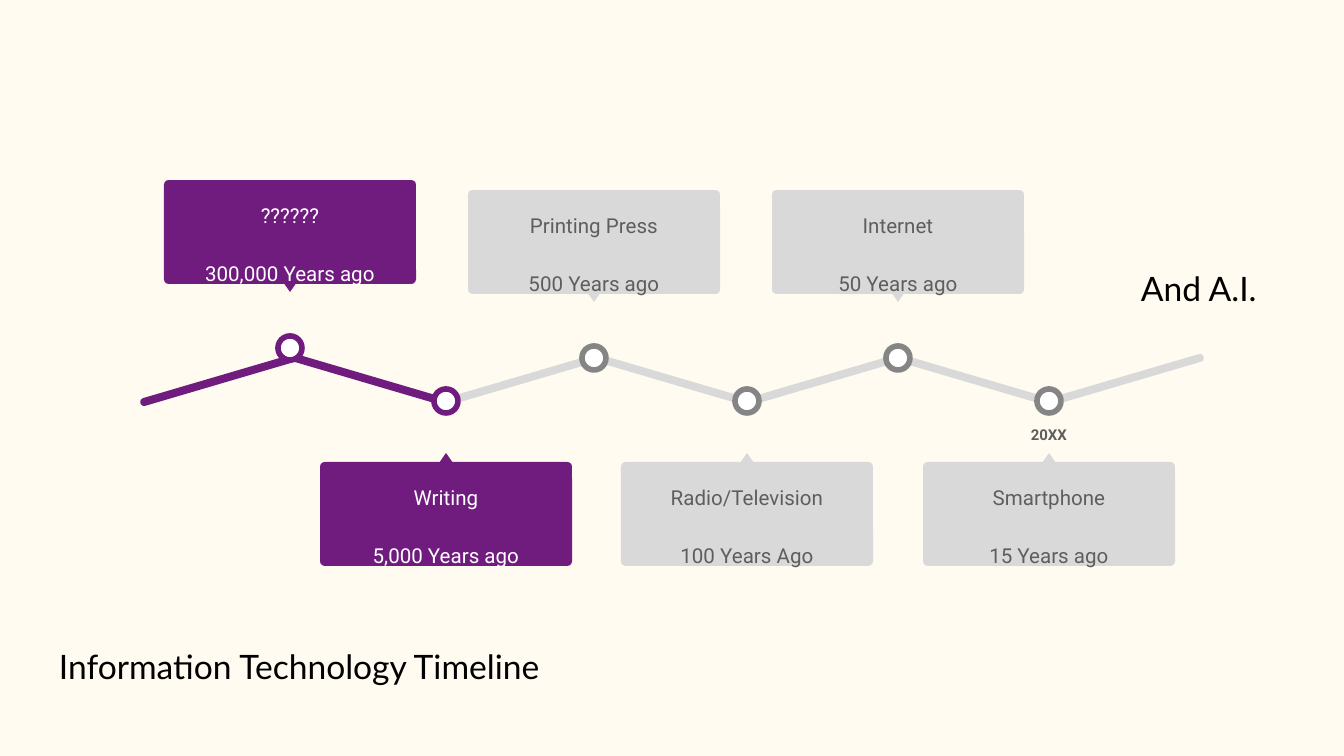
"""Builds a one-slide zigzag timeline of information technology."""
from dataclasses import dataclass

from pptx import Presentation
from pptx.dml.color import RGBColor
from pptx.enum.shapes import MSO_SHAPE
from pptx.enum.text import MSO_ANCHOR, PP_ALIGN
from pptx.util import Emu, Pt

SLIDE_W, SLIDE_H = 1344, 756
EMU_PER_PX = 9144000 / SLIDE_W
INSET = 13
CARD_W, CARD_H = 252, 104
POINTER_W, POINTER_H = 14, 10
DOT = 24
SEGMENT_W, SEGMENT_H = 164, 8
SEGMENT_X, SEGMENT_Y, SEGMENT_STEP = 219, 380, 151
SEGMENT_TILT = 16.4
SEGMENTS = 7
REACHED = 2


@dataclass(frozen=True)
class Theme:
    """Colours, fonts and type sizes of the slide."""
    background: str = "FFFBF0"
    ink: str = "000000"
    accent: str = "701C7F"
    muted: str = "D9D9D9"
    ring: str = "858585"
    grey_text: str = "5E5E5E"
    white: str = "FFFFFF"
    heading_font: str = "Lato"
    card_font: str = "Roboto"
    heading_size: int = 18
    card_size: int = 11
    year_size: int = 8
    ring_width: int = 3


@dataclass(frozen=True)
class Milestone:
    """One step of the timeline, with its card above or below the line."""
    x: int
    card_top: int
    above: bool
    lines: tuple
    reached: bool = False
    year: str = ""


THEME = Theme()
MILESTONES = (
    Milestone(290, 180, True, ("??????", "300,000 Years ago"), reached=True),
    Milestone(446, 462, False, ("Writing", "5,000 Years ago"), reached=True),
    Milestone(594, 190, True, ("Printing Press", "500 Years ago")),
    Milestone(747, 462, False, ("Radio/Television", "100 Years Ago")),
    Milestone(898, 190, True, ("Internet", "50 Years ago")),
    Milestone(1049, 462, False, ("Smartphone", "15 Years ago"), year="20XX"),
)


def px(value):
    """Turn whole pixels into EMU."""
    return Emu(round(value * EMU_PER_PX))


def box(x, y, w, h):
    """Return left, top, width and height in EMU."""
    return px(x), px(y), px(w), px(h)


def color(value):
    """Return an RGB colour from its hex code."""
    return RGBColor.from_string(value)


def add_filled(shapes, kind, bounds, fill, rotation=0, adjust=None):
    """Add a flat preset shape without outline or shadow."""
    sp = shapes.add_shape(kind, *box(*bounds))
    sp.shadow.inherit = False
    sp.fill.solid()
    sp.fill.fore_color.rgb = color(fill)
    sp.line.fill.background()
    sp.rotation = rotation
    if adjust is not None:
        sp.adjustments[0] = adjust
    return sp


def write(tf, lines, font, size, ink, align=PP_ALIGN.LEFT, bold=False,
          spacing=1.0, anchor=MSO_ANCHOR.TOP):
    """Fill a text frame with equally formatted paragraphs."""
    tf.word_wrap = True
    tf.vertical_anchor = anchor
    tf.margin_left = tf.margin_right = tf.margin_top = tf.margin_bottom = px(INSET)
    tf.text = "\n".join(lines)
    for i, p in enumerate(tf.paragraphs):
        p.alignment = align
        p.line_spacing = spacing
        p.space_before = Pt(16 if i else 0)
        for r in p.runs:
            r.font.name, r.font.size, r.font.bold = font, Pt(size), bold
            r.font.color.rgb = color(ink)


def write_heading(tf, text, anchor=MSO_ANCHOR.TOP):
    """Write one line in the heading style."""
    write(tf, [text], THEME.heading_font, THEME.heading_size, THEME.ink, anchor=anchor)


def add_title(slide, text):
    """Move the title placeholder to the foot of the slide and fill it."""
    title = slide.shapes.title
    title.left, title.top, title.width, title.height = box(46, 622, 882, 89)
    write_heading(title.text_frame, text, MSO_ANCHOR.MIDDLE)


def add_zigzag(shapes):
    """Add the line segments, the earliest one on top."""
    for i in reversed(range(SEGMENTS)):
        left = SEGMENT_X + i * SEGMENT_STEP - SEGMENT_W / 2
        add_filled(shapes, MSO_SHAPE.ROUNDED_RECTANGLE,
                   (left, SEGMENT_Y - SEGMENT_H / 2, SEGMENT_W, SEGMENT_H),
                   THEME.accent if i < REACHED else THEME.muted,
                   SEGMENT_TILT if i % 2 else -SEGMENT_TILT, 0.5)


def add_milestone(slide, step):
    """Add a grouped card with its pointer, text and dot on the line."""
    shapes = slide.shapes.add_group_shape().shapes
    fill = THEME.accent if step.reached else THEME.muted
    ink = THEME.white if step.reached else THEME.grey_text
    x, top = step.x, step.card_top
    pointer_top = top + 102 if step.above else top - 9
    dot_y = top + 168 if step.above else top - 61

    add_filled(shapes, MSO_SHAPE.ROUNDED_RECTANGLE,
               (x - CARD_W / 2, top, CARD_W, CARD_H), fill, adjust=0.045)
    add_filled(shapes, MSO_SHAPE.ISOSCELES_TRIANGLE,
               (x - POINTER_W / 2, pointer_top, POINTER_W, POINTER_H),
               fill, 180 if step.above else 0)
    label = shapes.add_textbox(*box(x - 120, top + 6, 240, 92))
    write(label.text_frame, step.lines, THEME.card_font, THEME.card_size, ink,
          PP_ALIGN.CENTER, spacing=1.15)
    dot = add_filled(shapes, MSO_SHAPE.OVAL,
                     (x - DOT / 2, dot_y - DOT / 2, DOT, DOT), THEME.white)
    dot.line.color.rgb = color(THEME.accent if step.reached else THEME.ring)
    dot.line.width = Pt(THEME.ring_width)
    if step.year:
        year = shapes.add_textbox(*box(x - 51, top - 49, 102, 40))
        write(year.text_frame, [step.year], THEME.card_font, THEME.year_size,
              THEME.grey_text, PP_ALIGN.CENTER, bold=True, spacing=1.15)


def main():
    """Build and save the slide."""
    prs = Presentation()
    prs.slide_width, prs.slide_height = px(SLIDE_W), px(SLIDE_H)
    slide = prs.slides.add_slide(prs.slide_layouts[5])
    slide.background.fill.solid()
    slide.background.fill.fore_color.rgb = color(THEME.background)

    add_title(slide, "Information Technology Timeline")
    add_zigzag(slide.shapes)
    for step in MILESTONES:
        add_milestone(slide, step)
    closing = slide.shapes.add_textbox(*box(1128, 255, 180, 74))
    write_heading(closing.text_frame, "And A.I.")
    prs.save("out.pptx")


if __name__ == "__main__":
    main()
